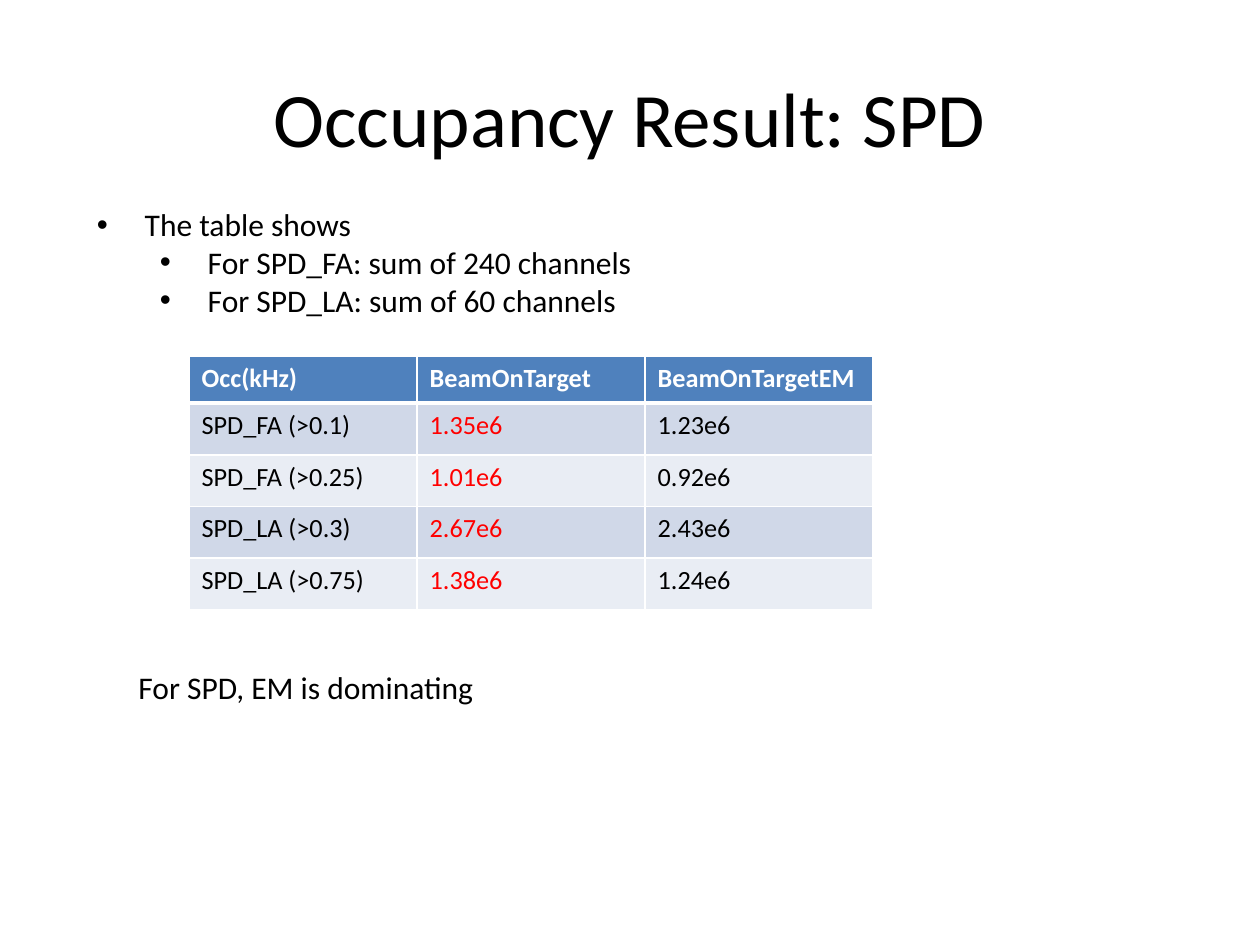
from lxml.etree import SubElement
from pptx import Presentation
from pptx.dml.color import RGBColor as Rgb
from pptx.enum.text import MSO_ANCHOR as Anchor, PP_ALIGN as Align
from pptx.oxml.ns import qn
from pptx.util import Inches, Pt

FONT = "Calibri"
COLORS = {
    "text": "000000", "alert": "FF0000", "white": "FFFFFF",
    "header": "4F81BD", "odd": "D0D8E8", "even": "E9EDF4",
}
TITLE = [("Occupancy Result: SPD", 0, 0, 0, "")]
BULLETS = [
    ("The table shows", 1, 0.88, -0.38, "•"),
    ("For SPD_FA: sum of 240 channels", 2, 1.38, -0.38, "•"),
    ("For SPD_LA: sum of 60 channels", 2, 1.38, -0.38, "•"),
]
CONCLUSION = [("For SPD, EM is dominating", 1, 0.5, 0, "")]
OCCUPANCY = [
    ("Occ(kHz)", "BeamOnTarget", "BeamOnTargetEM"),
    ("SPD_FA (>0.1)", "1.35e6", "1.23e6"),
    ("SPD_FA (>0.25)", "1.01e6", "0.92e6"),
    ("SPD_LA (>0.3)", "2.67e6", "2.43e6"),
    ("SPD_LA (>0.75)", "1.38e6", "1.24e6"),
]
COLUMN_WIDTH, HEADER_HEIGHT, ROW_HEIGHT = 1.81, 0.37, 0.41


def color(name):
    return Rgb.from_string(COLORS[name])


def add_span(para, text, size, ink="text", bold=False):
    span = para.add_run()
    span.text = text
    span.font.name = FONT
    span.font.size = Pt(size)
    span.font.bold = bold
    span.font.color.rgb = color(ink)


def add_text(page, area, lines, size, align=Align.LEFT, anchor=Anchor.TOP):
    frame = page.shapes.add_textbox(*map(Inches, area)).text_frame
    frame.word_wrap = True
    frame.vertical_anchor = anchor
    for index, (text, level, margin, indent, bullet) in enumerate(lines):
        para = frame.add_paragraph() if index else frame.paragraphs[0]
        para.alignment = align
        para.level = level
        props = para._p.get_or_add_pPr()
        props.set("marL", str(Inches(margin)))
        props.set("indent", str(Inches(indent)))
        if bullet:
            SubElement(props, qn("a:buFont")).set("typeface", "Arial")
            SubElement(props, qn("a:buChar")).set("char", bullet)
        add_span(para, text, size)


def add_borders(cell, widths):
    props = cell._tc.get_or_add_tcPr()
    for index, (side, width) in enumerate(zip("LRTB", widths)):
        line = SubElement(props, qn(f"a:ln{side}"), w=str(Pt(width)))
        fill = SubElement(line, qn("a:solidFill"))
        SubElement(fill, qn("a:srgbClr"), val=COLORS["white"])
        props.insert(index, line)


def add_occupancy_table(page, left, top):
    rows, columns = len(OCCUPANCY), len(OCCUPANCY[0])
    height = HEADER_HEIGHT + (rows - 1) * ROW_HEIGHT
    area = (left, top, columns * COLUMN_WIDTH, height)
    table = page.shapes.add_table(rows, columns, *map(Inches, area)).table
    for column in table.columns:
        column.width = Inches(COLUMN_WIDTH)
    for r, values in enumerate(OCCUPANCY):
        header = r == 0
        table.rows[r].height = Inches(HEADER_HEIGHT if header else ROW_HEIGHT)
        band = "header" if header else ("even", "odd")[r % 2]
        for c, value in enumerate(values):
            cell = table.cell(r, c)
            cell.fill.solid()
            cell.fill.fore_color.rgb = color(band)
            add_borders(cell, (1, 1, 3 if r == 1 else 1, 3 if header else 1))
            ink = "white" if header else "alert" if c == 1 else "text"
            add_span(cell.text_frame.paragraphs[0], value, 15, ink, header)


def main():
    deck = Presentation()
    deck.slide_width, deck.slide_height = Inches(10), Inches(7.5)
    page = deck.slides.add_slide(deck.slide_layouts[6])
    add_text(page, (0.5, 0.3, 9, 1.25), TITLE, 44, Align.CENTER, Anchor.MIDDLE)
    add_occupancy_table(page, 1.5, 2.83)
    add_text(page, (0.17, 1.58, 7.08, 1.01), BULLETS, 18)
    add_text(page, (0.5, 5.25, 7.08, 0.4), CONCLUSION, 18)
    deck.save("out.pptx")


if __name__ == "__main__":
    main()
